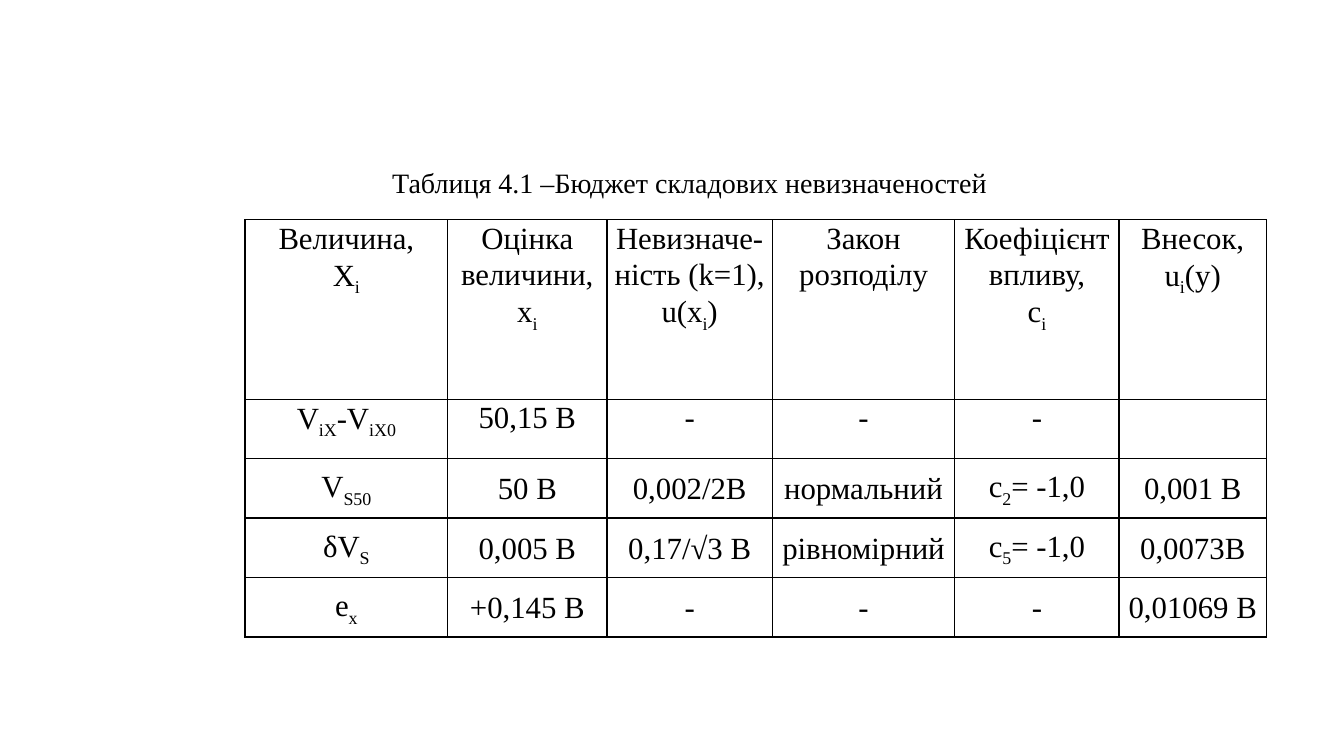
from lxml.etree import SubElement
from pptx import Presentation
from pptx.dml.color import RGBColor
from pptx.enum.text import MSO_ANCHOR, PP_ALIGN
from pptx.oxml.ns import qn
from pptx.util import Inches, Pt

BLACK = RGBColor(0x00, 0x00, 0x00)
FONT = "Times New Roman"
CAPTION = "Таблиця 4.1 –Бюджет складових невизначеностей"
CAPTION_BOX = (3.3, 1.43, 6.65, 0.61)
TABLE_BOX = (2.43, 2.18, 10.13, 4.14)
COLUMN_WIDTHS = (2.01, 1.58, 1.64, 1.81, 1.63, 1.46)
ROW_HEIGHTS = (1.78, 0.59, 0.59, 0.59, 0.59)
TOP_ROWS = 2
BUDGET = (
    ("Величина,\nХ_i_", "Оцінка величини,\nx_i_", "Невизначе-ність (k=1),\nu(x_i_)",
     "Закон розподілу", "Коефіцієнт впливу,\nc_i_", "Внесок,\nu_i_(y)"),
    ("V_iX_-V_iX0_", "50,15 В", "-", "-", "-", ""),
    ("V_S50_", "50 В", "0,002/2В", "нормальний", "c_2_= -1,0", "0,001 В"),
    ("δV_S_", "0,005 В", "0,17/√3 В", "рівномірний", "c_5_= -1,0", "0,0073В"),
    ("e_x_", "+0,145 В", "-", "-", "-", "0,01069 В"),
)


def apply(target, formats):
    """Set each attribute of the target from a dict."""
    for name, value in formats.items():
        setattr(target, name, value)


def set_font(font, size):
    """Give a font the slide's typeface and colour."""
    apply(font, {"name": FONT, "size": Pt(size), "bold": False})
    font.color.rgb = BLACK


def write_line(para, text):
    """Write one centred table line, with subscripts between underscores."""
    apply(para, {"alignment": PP_ALIGN.CENTER, "line_spacing": 1.07})
    set_font(para.font, 22)
    for index, part in enumerate(text.split("_")):
        if part:
            span = para.add_run()
            span.text = part
            set_font(span.font, 22)
            if index % 2:
                span._r.get_or_add_rPr().set("baseline", "-25000")


def draw_borders(cell):
    """Outline all four sides of a cell."""
    properties = cell._tc.get_or_add_tcPr()
    for position, side in enumerate(("lnL", "lnR", "lnT", "lnB")):
        line = SubElement(properties, qn(f"a:{side}"), w=str(Pt(1)))
        fill = SubElement(line, qn("a:solidFill"))
        SubElement(fill, qn("a:srgbClr"), val=str(BLACK))
        properties.insert(position, line)


def fill_cell(cell, text, anchor):
    """Format a cell and write its lines."""
    apply(cell, {"margin_left": Inches(0.07), "margin_right": Inches(0.07),
                 "margin_top": 0, "margin_bottom": 0, "vertical_anchor": anchor})
    cell.fill.background()
    draw_borders(cell)
    frame = cell.text_frame
    for index, line in enumerate(text.split("\n")):
        para = frame.add_paragraph() if index else frame.paragraphs[0]
        write_line(para, line)


def add_caption(page, box):
    """Place the table caption in the box."""
    frame = page.shapes.add_textbox(*map(Inches, box)).text_frame
    frame.word_wrap = False
    para = frame.paragraphs[0]
    apply(para, {"alignment": PP_ALIGN.JUSTIFY, "line_spacing": 1.5})
    para._p.get_or_add_pPr().set("indent", str(Inches(0.49)))
    span = para.add_run()
    span.text = CAPTION
    set_font(span.font, 20)


def add_budget(page, box):
    """Place the uncertainty budget table in the box."""
    table = page.shapes.add_table(len(ROW_HEIGHTS), len(COLUMN_WIDTHS), *map(Inches, box)).table
    apply(table, {"first_row": False, "horz_banding": False})
    for column, width in zip(table.columns, COLUMN_WIDTHS):
        column.width = Inches(width)
    for index, (row, height, texts) in enumerate(zip(table.rows, ROW_HEIGHTS, BUDGET)):
        row.height = Inches(height)
        anchor = MSO_ANCHOR.TOP if index < TOP_ROWS else MSO_ANCHOR.MIDDLE
        for cell, text in zip(row.cells, texts):
            fill_cell(cell, text, anchor)


def main():
    """Build and save the slide."""
    deck = Presentation()
    apply(deck, {"slide_width": Inches(13.33), "slide_height": Inches(7.5)})
    page = deck.slides.add_slide(deck.slide_layouts[6])
    add_budget(page, TABLE_BOX)
    add_caption(page, CAPTION_BOX)
    deck.save("out.pptx")


if __name__ == "__main__":
    main()
